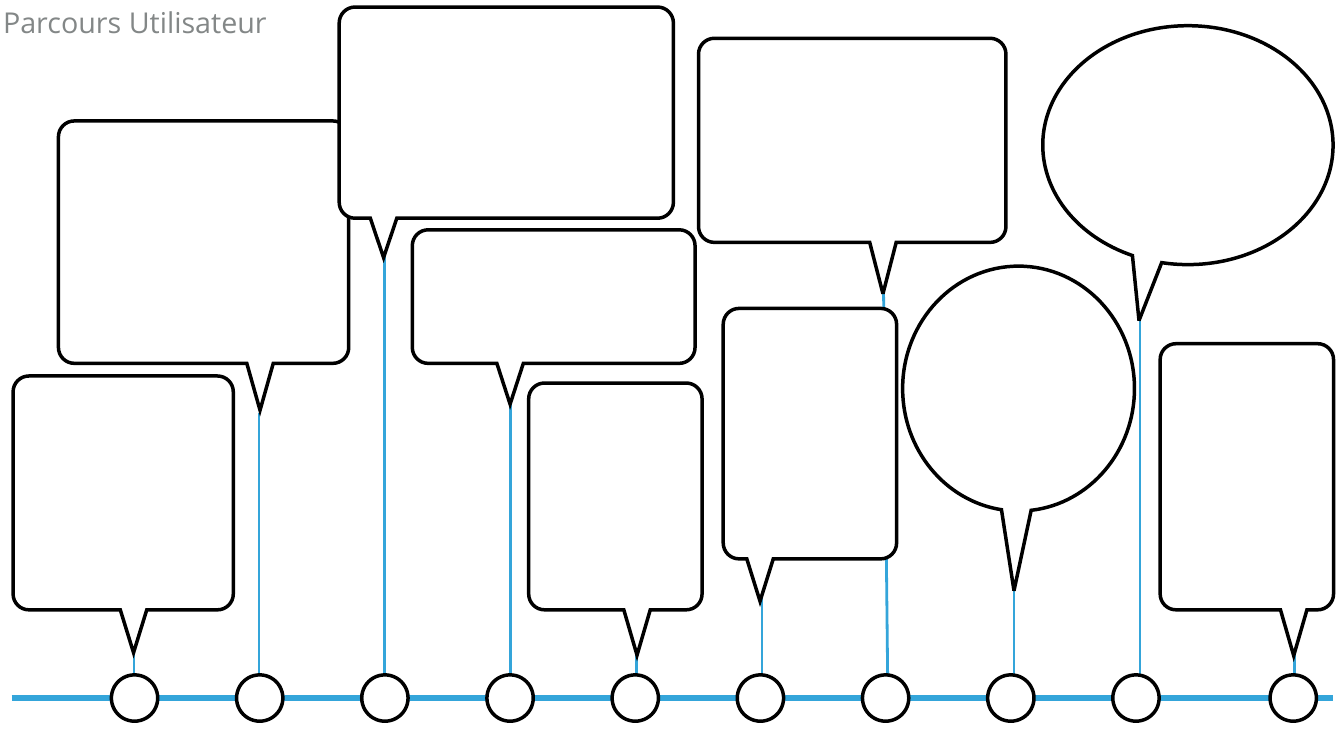
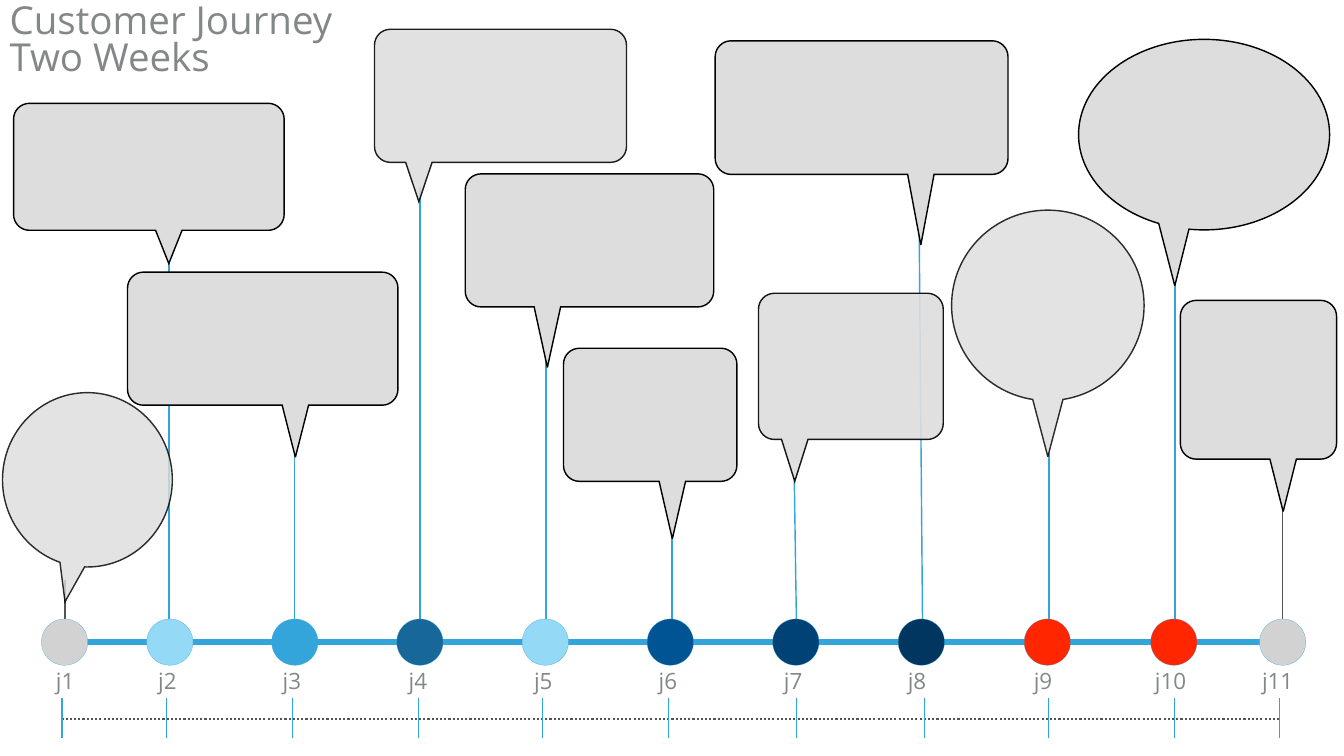
from dataclasses import dataclass
from math import acos, cos, pi, sin, tan

from lxml.etree import Element, SubElement
from pptx import Presentation
from pptx.dml.color import RGBColor
from pptx.enum.dml import MSO_LINE
from pptx.enum.shapes import MSO_CONNECTOR, MSO_SHAPE
from pptx.enum.text import MSO_ANCHOR, MSO_AUTO_SIZE, PP_ALIGN
from pptx.oxml.ns import qn
from pptx.util import Pt

# Shared look
FONT = "Open Sans"
WHITE, BLACK, TEXT_GREY, DARK_GREY = "FFFFFF", "000000", "838787", "535353"
BLUE, BUBBLE_GREY, END_GREY = "34A5DA", "DDDDDD", "D2D2D2"
PAGE_BOX = (0, 0, 1920, 1080)
DOT_SIZE = 66.2
CORNER = 22.7
TITLE_ONLY = 5
# How far each stem reaches past the axis, behind its dot
STEM_ENDS = [-13, -3, 7.2, 17.3, -3, 7.2, 17.3, -3, 7.2, -3]


@dataclass
class Bubble:
    left: float
    top: float
    width: float
    height: float
    tip: float           # tail tip, measured from the left edge
    drop: float          # tail length below the body
    oval: bool = False
    base: float = 0      # middle of an oval's tail, from the left edge
    half: float = 18.9   # half the width of the tail where it joins
    opacity: int = 100


@dataclass
class Stop:
    bubble: Bubble
    stem_x: float
    stem_top: float
    lean: float = 0
    dot: str = WHITE
    stem: str = BLUE


@dataclass
class Style:
    axis: tuple          # left, right, height on the page
    axis_width: float
    dot_line: tuple      # colour, width
    bubble_fill: str
    bubble_line: float
    stem_line: float


def spread(first, step, count):
    return [first + step * index for index in range(count)]


def colour(value):
    return RGBColor.from_string(value)


# Text
def write(shape, text, size, spacing=None, tabs=()):
    frame = shape.text_frame
    frame.word_wrap = True
    frame.auto_size = MSO_AUTO_SIZE.NONE
    frame.vertical_anchor = MSO_ANCHOR.MIDDLE
    frame.margin_left = frame.margin_right = Pt(4.3)
    frame.margin_top = frame.margin_bottom = Pt(4.3)
    for index, line in enumerate(text.split("\n")):
        para = frame.add_paragraph() if index else frame.paragraphs[0]
        para.alignment = PP_ALIGN.LEFT
        para.space_before = Pt(0)
        if spacing:
            para.line_spacing = spacing
        if tabs:
            tab_list = SubElement(para._p.get_or_add_pPr(), qn("a:tabLst"))
            for position in tabs:
                SubElement(tab_list, qn("a:tab"), pos=str(Pt(position)), algn="l")
        span = para.add_run()
        span.text = line
        span.font.name = FONT
        span.font.size = Pt(size)
        span.font.color.rgb = colour(TEXT_GREY)


def add_title(page, box, text, size, spacing=None, fill=None):
    title = page.shapes.title
    title.left, title.top, title.width, title.height = map(Pt, box)
    if fill:
        title.fill.solid()
        title.fill.fore_color.rgb = colour(fill)
    write(title, text, size, spacing=spacing)


# Lines and shapes
def add_line(page, start, end, line_colour, width, dash=None):
    line = page.shapes.add_connector(MSO_CONNECTOR.STRAIGHT, *map(Pt, start + end))
    line.line.color.rgb = colour(line_colour)
    line.line.width = Pt(width)
    if dash:
        line.line.dash_style = dash
    SubElement(line._element.spPr, qn("a:effectLst"))


def paint(shape, fill, line_colour, width, opacity=100):
    shape.shadow.inherit = False
    shape.fill.solid()
    shape.fill.fore_color.rgb = colour(fill)
    shape.line.color.rgb = colour(line_colour)
    shape.line.width = Pt(width)
    if opacity < 100:
        for shade in shape._element.spPr.iter(qn("a:srgbClr")):
            SubElement(shade, qn("a:alpha"), val=str(opacity * 1000))


# Outlines are lists of steps: one point for a line, three for a curve
def curve(centre_x, centre_y, radius_x, radius_y, start, end):
    pull = 4 / 3 * tan((end - start) / 4)

    def point(angle, reach):
        return (centre_x + radius_x * (cos(angle) - reach * sin(angle)),
                centre_y + radius_y * (sin(angle) + reach * cos(angle)))
    return [point(start, pull), point(end, -pull), point(end, 0)]


def oval_outline(bubble):
    radius_x, radius_y = bubble.width / 2, bubble.height / 2
    right = acos((bubble.base + bubble.half - radius_x) / radius_x)
    left = acos((bubble.base - bubble.half - radius_x) / radius_x)

    def sweep(angles):
        return [curve(radius_x, radius_y, radius_x, radius_y, start, end)
                for start, end in zip(angles, angles[1:])]
    tail = [[(bubble.tip, bubble.height + bubble.drop)],
            [(bubble.base + bubble.half, radius_y * (1 + sin(right)))]]
    bottom = [pi / 2] if right > pi / 2 + 0.01 else []
    return ([[(radius_x, 0)]] + sweep([-pi / 2, -pi, left - 2 * pi]) + tail
            + sweep([right] + bottom + [0, -pi / 2]))


def rounded_outline(bubble):
    right, low = bubble.width - CORNER, bubble.height - CORNER

    def corner(x, y, quarter):
        return curve(x, y, CORNER, CORNER, quarter * pi / 2, (quarter - 1) * pi / 2)
    tail = [[(bubble.tip - bubble.half, bubble.height)],
            [(bubble.tip, bubble.height + bubble.drop)],
            [(bubble.tip + bubble.half, bubble.height)]]
    return ([[(CORNER, 0)], corner(CORNER, CORNER, 3),
             [(0, low)], corner(CORNER, low, 2)] + tail
            + [[(right, bubble.height)], corner(right, low, 1),
               [(bubble.width, CORNER)], corner(right, CORNER, 0), [(CORNER, 0)]])


def add_bubble(page, box, bubble, style):
    outline = oval_outline(bubble) if bubble.oval else rounded_outline(bubble)
    left, top = box[0] + bubble.left, box[1] + bubble.top
    points = [(Pt(left + step[-1][0]), Pt(top + step[-1][1])) for step in outline]
    builder = page.shapes.build_freeform(*points[0], scale=1.0)
    builder.add_line_segments(points[1:], close=True)
    shape = builder.convert_to_shape()
    # Turn the straight steps that have control points into curves
    outline_path = next(shape._element.spPr.iter(qn("a:path")))
    for step, segment in zip(outline, list(outline_path)):
        if len(step) == 3:
            bend = Element(qn("a:cubicBezTo"))
            for x, y in step:
                SubElement(bend, qn("a:pt"), x=str(Pt(x)), y=str(Pt(y)))
            outline_path.replace(segment, bend)
    paint(shape, style.bubble_fill, BLACK, style.bubble_line, bubble.opacity)
    SubElement(shape.line._get_or_add_ln(), qn("a:miter"), lim="400000")


# Timeline: stems, axis, dots, then bubbles in front
def draw_timeline(page, box, stops, stem_ends, dot_xs, style):
    left, top = box[:2]
    start, end, level = style.axis
    axis_y = top + level
    for stop, past_axis in zip(stops, stem_ends):
        x = left + stop.stem_x
        add_line(page, (x, axis_y + past_axis), (x + stop.lean, top + stop.stem_top),
                 stop.stem, style.stem_line)
    add_line(page, (left + start, axis_y), (left + end, axis_y), BLUE, style.axis_width)
    for stop, x in zip(stops, dot_xs):
        corner = (left + x - DOT_SIZE / 2, axis_y - DOT_SIZE / 2)
        dot = page.shapes.add_shape(MSO_SHAPE.OVAL, *map(Pt, corner + (DOT_SIZE, DOT_SIZE)))
        paint(dot, stop.dot, *style.dot_line)
    # The first bubble may overlap its neighbours, so it goes on last
    for stop in stops[1:] + stops[:1]:
        add_bubble(page, box, stop.bubble, style)


# Day scale: labels, dotted ruler and ticks
def draw_day_scale(page, box, label_tabs, tick_xs):
    left, top, width, height = box
    ruler_y, tick_top, tick_bottom = top + 79.9, top + 49.7, top + height
    add_line(page, (left + 12.2, ruler_y), (left + width - 26.6, ruler_y),
             DARK_GREY, 3, MSO_LINE.ROUND_DOT)
    for x in tick_xs:
        weight = 2 if x in (tick_xs[0], tick_xs[-1]) else 1
        add_line(page, (left + x, tick_bottom), (left + x, tick_top), BLUE, weight)
    labels = page.shapes.add_textbox(*map(Pt, (left, top, width, 51.1)))
    write(labels, "\t".join(f"j{day}" for day in range(1, 12)), 32, tabs=label_tabs)


USER_STOPS = [
    Stop(Bubble(18.7, 537.1, 314.6, 334.1, 172.1, 61.2), 191.5, 804.2),
    Stop(Bubble(83.5, 172.8, 414.7, 346.3, 288, 67), 370.1, 589.7),
    Stop(Bubble(484.6, 10.1, 477.4, 301.7, 63.4, 56.2), 549.4, 326.2),
    Stop(Bubble(589, 328.3, 403.9, 190.8, 139.7, 58.3), 729.4, 576.7),
    Stop(Bubble(755.3, 547.2, 247.7, 324, 154.8, 64.8), 909.4, 814.3),
    Stop(Bubble(1033.2, 440.6, 247.7, 357.8, 52.6, 60.5), 1088.6, 814.3),
    Stop(Bubble(997.9, 54.7, 439.2, 291.6, 263.5, 73.4), 1268.6, 406.8, lean=-6.5),
    Stop(Bubble(1289.5, 380.2, 331.2, 349.9, 159.1, 113.8, True, 162.4, 21.2),
         1448.6, 739.4),
    Stop(Bubble(1489.7, 36.7, 414.7, 341.3, 137.5, 79.9, True, 149, 20.9),
         1628.6, 430.6),
    Stop(Bubble(1657.4, 491, 247.7, 380.2, 190.8, 65.5), 1849.7, 814.3),
]

CUSTOMER_STOPS = [
    Stop(Bubble(3.6, 560.9, 242.6, 249.1, 89.3, 49.7, True, 99.7, 17.6, 82),
         92.9, 828.7, dot=END_GREY, stem=DARK_GREY),
    Stop(Bubble(19.4, 147.6, 386.6, 181.4, 221.8, 47.5), 241.2, 283, dot="94D9F6"),
    Stop(Bubble(182.2, 388.8, 386.3, 190.1, 239.8, 74.2), 420.5, 509.8, dot=BLUE),
    Stop(Bubble(535, 41.8, 360, 190.1, 63.4, 56.2, opacity=88),
         599.8, 267.1, dot="18679A"),
    Stop(Bubble(664.6, 248.4, 355, 190.1, 117.4, 86.4), 779.8, 496.1, dot="94D9F6"),
    Stop(Bubble(805, 497.5, 247.7, 190.1, 155.5, 82.1), 959.8, 694.1, dot="005493"),
    Stop(Bubble(1083.6, 419, 263.9, 208.8, 51.8, 59.8, opacity=91),
         1138.3, 684, lean=-3.6, dot="004275"),
    Stop(Bubble(1021.7, 58.3, 418.3, 190.8, 293.8, 100.8),
         1318.3, 257, lean=-5.8, dot="00365F"),
    Stop(Bubble(1359.4, 300.2, 275, 272.2, 137.5, 79.9, True, 137.5, 21.6, 82),
         1498.3, 646.6, dot="FF2600"),
    Stop(Bubble(1540.8, 56.2, 358.6, 272.2, 137.5, 79.9, True, 136.1, 21.6),
         1678.3, 388.1, dot="FF2600"),
    Stop(Bubble(1686.2, 429.1, 223.2, 226.8, 146.9, 74.9),
         1832.4, 694.1, dot=END_GREY, stem=DARK_GREY),
]


def build_user_page(deck):
    page = deck.slides.add_slide(deck.slide_layouts[TITLE_ONLY])
    add_title(page, (0, 0, 419.8, 64.1), "Parcours Utilisateur", 41, fill=WHITE)
    style = Style((16.6, 1903.7, 997.2), 9, (BLACK, 5), WHITE, 5, 4)
    draw_timeline(page, PAGE_BOX, USER_STOPS, STEM_ENDS,
                  spread(192.2, 178.83, 9) + [1847.5], style)


def build_customer_page(deck):
    page = deck.slides.add_slide(deck.slide_layouts[TITLE_ONLY])
    add_title(page, (9.4, -11.5, 517.7, 143.3), "Customer Journey\nTwo Weeks", 55,
              spacing=0.8)
    style = Style((113, 1806.5, 917.3), 8, (BLUE, 0.25), BUBBLE_GREY, 2, 2)
    dot_xs = [92.2, 242.6, 421.2, 599.8, 779, 957.6, 1136.9, 1316.2, 1496.2,
              1676.9, 1832.4]
    draw_timeline(page, PAGE_BOX, CUSTOMER_STOPS, [15.1] + STEM_ENDS, dot_xs, style)
    draw_day_scale(page, (75.6, 946.8, 1778.4, 108),
                   (146, 324, 504, 683, 861, 1040, 1217, 1397, 1570, 1723),
                   [13, 162.7, 342.7, 522.7, 699.1, 879.8, 1062.7, 1244.2, 1422.7,
                    1602.7, 1752.5])


def main():
    deck = Presentation()
    deck.slide_width, deck.slide_height = Pt(PAGE_BOX[2]), Pt(PAGE_BOX[3])
    build_user_page(deck)
    build_customer_page(deck)
    deck.save("out.pptx")


if __name__ == "__main__":
    main()
